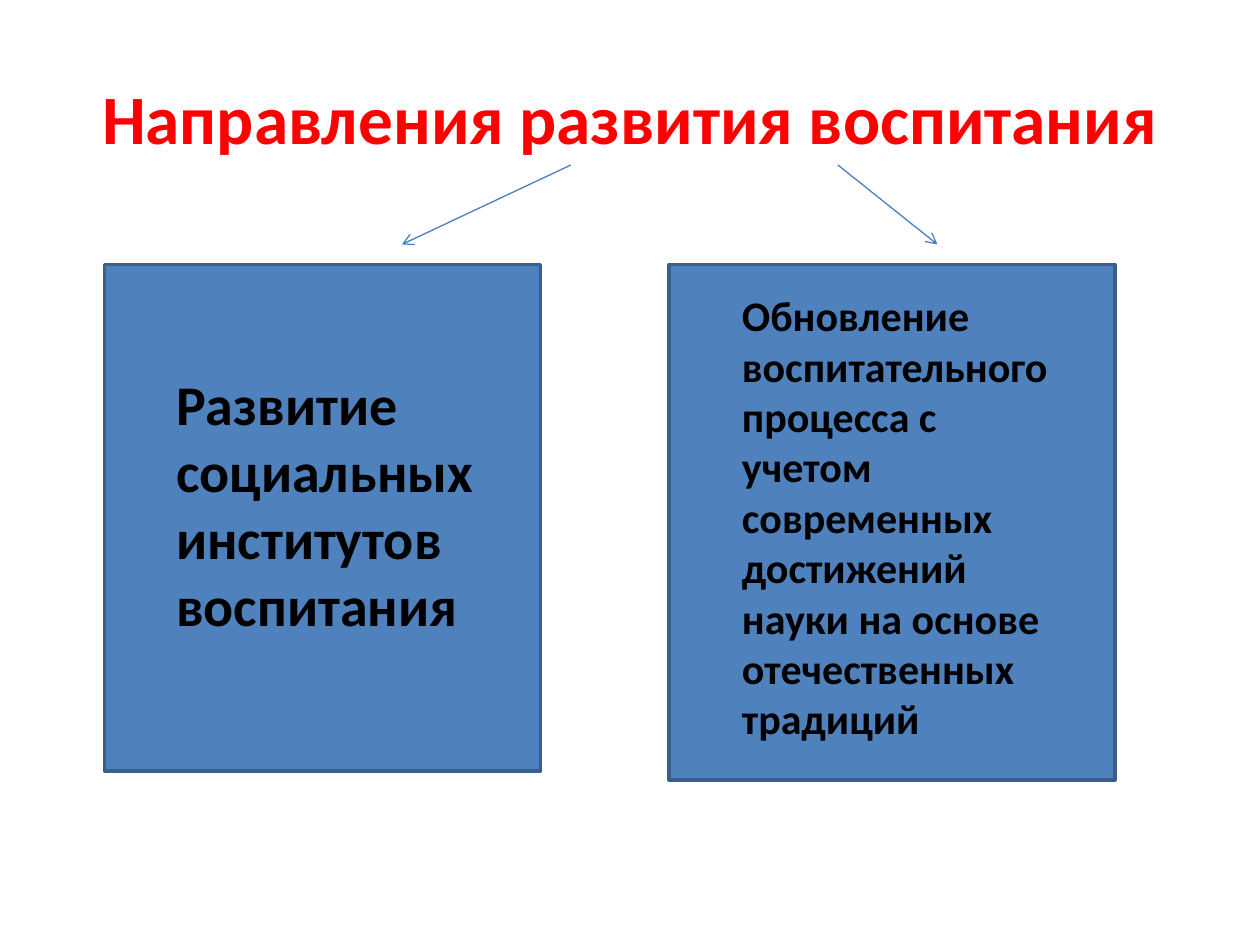
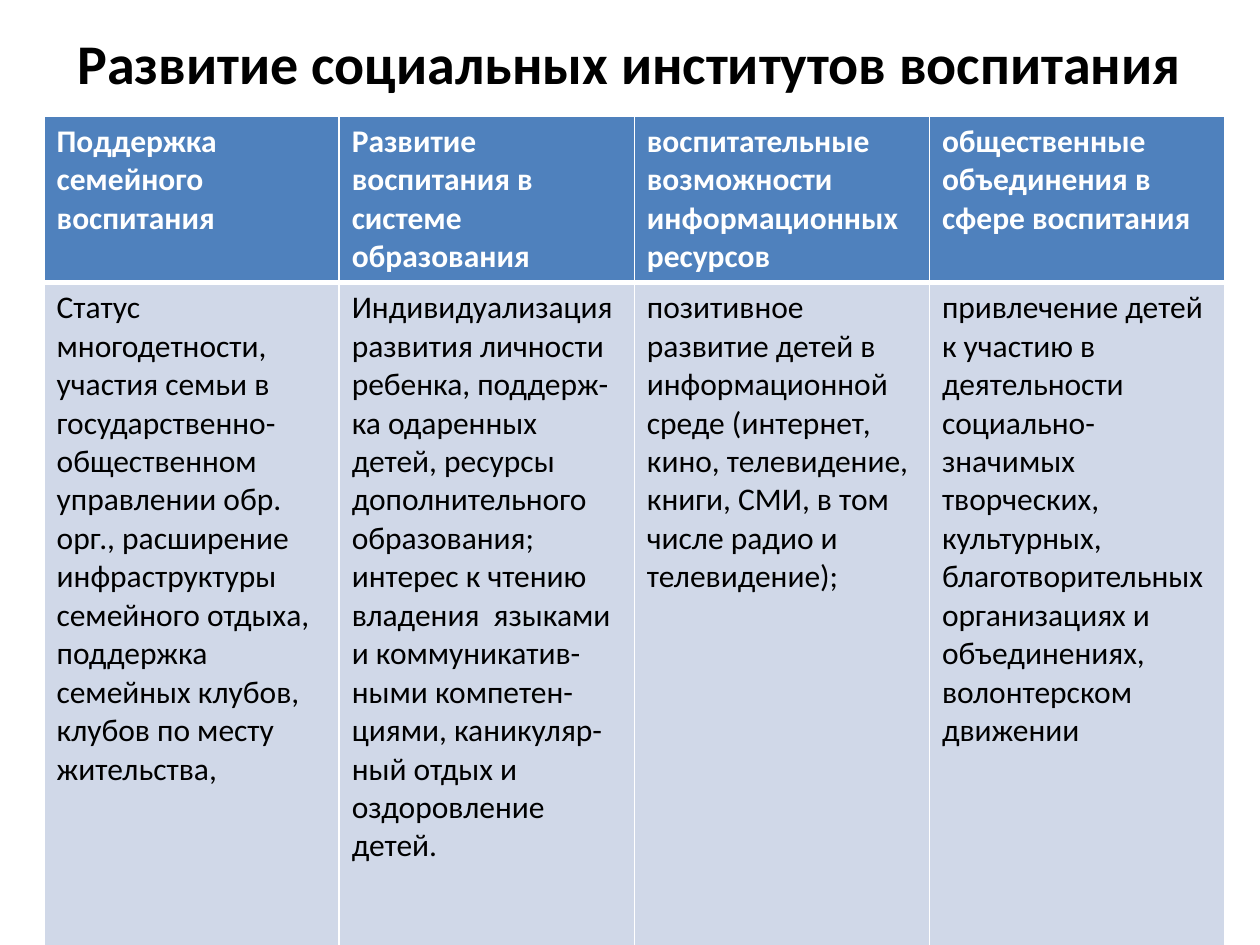
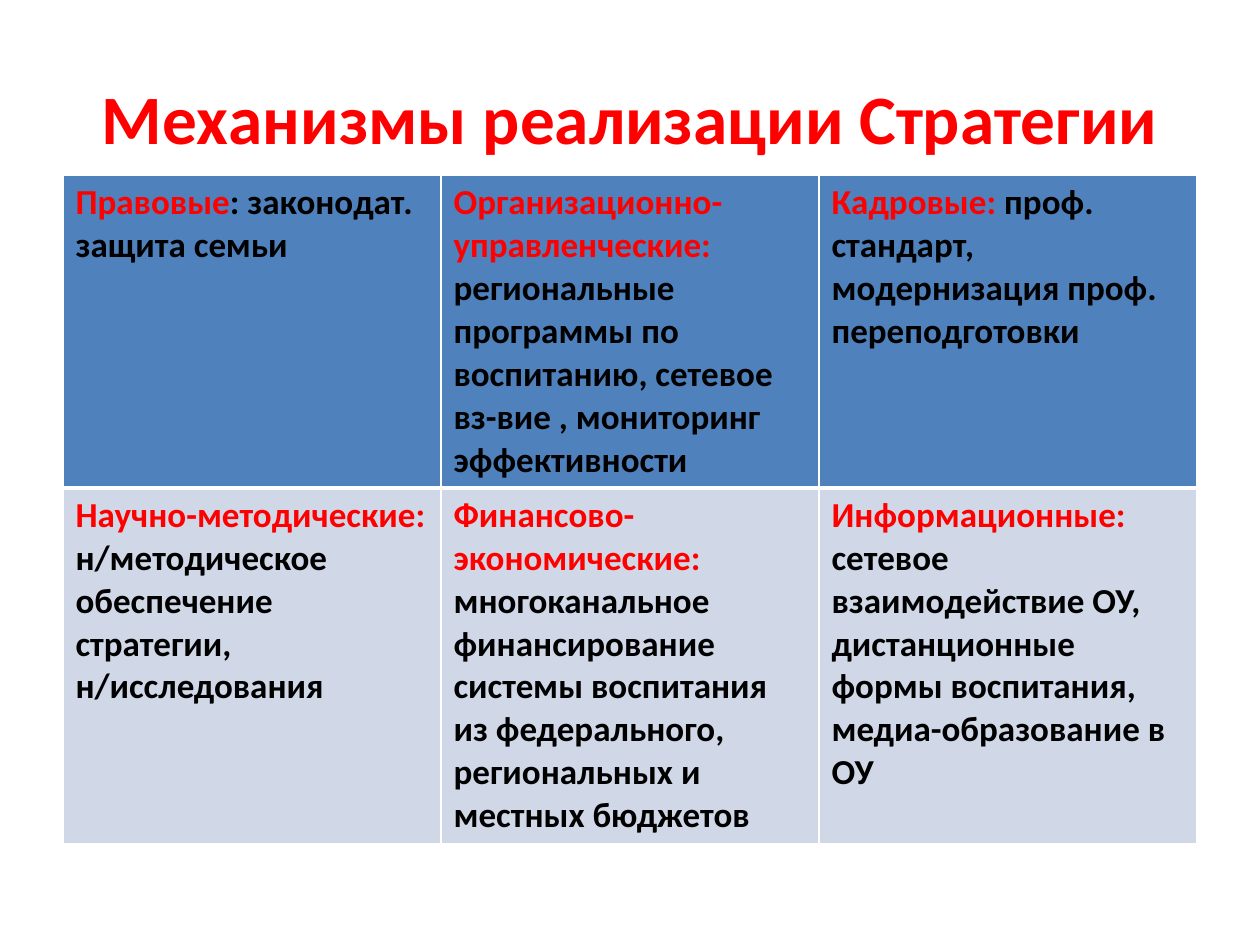
from dataclasses import dataclass
from typing import NamedTuple

from lxml import etree
from pptx import Presentation
from pptx import util as u
from pptx.dml.color import RGBColor
from pptx.enum import shapes, text
from pptx.oxml import ns


@dataclass(frozen=True)
class Theme:
    font: str = "Calibri"
    red: str = "FF0000"
    black: str = "000000"
    white: str = "FFFFFF"
    blue: str = "4F81BD"
    edge: str = "3A5F8C"
    arrow: str = "4B7EBC"
    pale: str = "D0D8E8"
    head: float = 39.6
    large: float = 32
    mid: float = 24
    note: float = 20
    small: float = 18
    thin: float = 1
    thick: float = 3


class Box(NamedTuple):
    col: float
    row: float
    wide: float
    high: float


class Style(NamedTuple):
    size: float
    ink: str
    bold: bool = True


class Run(NamedTuple):
    words: str
    ink: str | None = None


class Card(NamedTuple):
    frame: Box
    label: Box
    words: str
    size: float


class Arrow(NamedTuple):
    start: tuple[float, float]
    end: tuple[float, float]


class Band(NamedTuple):
    high: float
    fill: str
    style: Style
    cells: list


THEME = Theme()
WIDE, HIGH = u.Inches(10), u.Inches(7.5)
COLS, ROWS = 100, 75

TOP = Box(5, 3, 90, 12.5)
RED = Style(THEME.head, THEME.red)

CARDS = [
    Card(Box(8.3, 21, 34.6, 40.2), Box(13, 28.8, 26, 22.6),
         "Развитие социальных институтов воспитания", THEME.large),
    Card(Box(53.1, 21, 35.4, 40.9), Box(57.9, 22.5, 28.3, 37),
         "Обновление воспитательного процесса с учетом современных "
         "достижений науки на основе отечественных традиций", THEME.mid),
]
ARROWS = [
    Arrow((45.3, 13.1), (31.9, 19.4)),
    Arrow((66.5, 13.1), (74.4, 19.4)),
]

FIELDS = [
    Band(12.8, THEME.blue, Style(THEME.small, THEME.white), [
        ["Поддержка семейного воспитания"],
        ["Развитие воспитания в системе образования"],
        ["воспитательные возможности информационных ресурсов"],
        ["общественные объединения в сфере воспитания"],
    ]),
    Band(54.4, THEME.pale, Style(THEME.small, THEME.black, False), [
        ["Статус многодетности, участия семьи в государственно-общественном "
         "управлении обр. орг., расширение инфраструктуры семейного отдыха, "
         "поддержка семейных клубов, клубов по месту жительства,"],
        ["Индивидуализация развития личности ребенка, поддерж-ка одаренных "
         "детей, ресурсы дополнительного образования;",
         "интерес к чтению",
         "владения  языками и коммуникатив-ными компетен- циями, "
         "каникуляр-ный отдых и оздоровление детей."],
        ["позитивное развитие детей в информационной среде (интернет, кино, "
         "телевидение, книги, СМИ, в том числе радио и телевидение);"],
        ["привлечение детей к участию в деятельности социально-значимых "
         "творческих, культурных, благотворительных организациях и "
         "объединениях, волонтерском движении"],
    ]),
]


def pair(lead: str, rest: str) -> list:
    return [[Run(lead, THEME.red), Run(rest, THEME.black)]]


NOTE = Style(THEME.note, THEME.black)
MEANS = [
    Band(24.6, THEME.blue, NOTE, [
        pair("Правовые", ": законодат. защита семьи"),
        pair("Организационно-управленческие: ",
             "региональные программы по воспитанию, сетевое вз-вие , "
             "мониторинг эффективности"),
        pair("Кадровые: ",
             "проф. стандарт, модернизация проф. переподготовки"),
    ]),
    Band(28, THEME.pale, NOTE, [
        pair("Научно-методические: ",
             "н/методическое обеспечение стратегии, н/исследования"),
        pair("Финансово-экономические: ",
             "многоканальное финансирование системы воспитания из "
             "федерального, региональных и местных бюджетов"),
        pair("Информационные: ",
             "сетевое взаимодействие ОУ, дистанционные формы воспитания, "
             "медиа-образование в ОУ"),
    ]),
]


def across(cols: float) -> int:
    return round(WIDE * cols / COLS)


def down(rows: float) -> int:
    return round(HIGH * rows / ROWS)


def place(box: Box) -> tuple[int, int, int, int]:
    return across(box.col), down(box.row), across(box.wide), down(box.high)


def tint(code: str) -> RGBColor:
    return RGBColor.from_string(code)


def write(frame, lines: list, style: Style, align=text.PP_ALIGN.LEFT) -> None:
    for index, line in enumerate(lines):
        para = frame.add_paragraph() if index else frame.paragraphs[0]
        para.alignment = align
        font = para.font
        font.name, font.size, font.bold = THEME.font, u.Pt(style.size), style.bold
        font.color.rgb = tint(style.ink)
        for part in [Run(line)] if isinstance(line, str) else line:
            run = para.add_run()
            run.text = part.words
            if part.ink:
                run.font.color.rgb = tint(part.ink)


def start(deck, words: str, box: Box, style: Style):
    slide = deck.slides.add_slide(deck.slide_layouts[5])
    title = slide.shapes.title
    title.left, title.top, title.width, title.height = place(box)
    frame = title.text_frame
    frame.auto_size = text.MSO_AUTO_SIZE.NONE
    frame.vertical_anchor = text.MSO_ANCHOR.MIDDLE
    write(frame, [words], style, text.PP_ALIGN.CENTER)
    return slide


def panel(slide, card: Card) -> None:
    rect = slide.shapes.add_shape(shapes.MSO_SHAPE.RECTANGLE, *place(card.frame))
    rect.shadow.inherit = False
    rect.fill.solid()
    rect.fill.fore_color.rgb = tint(THEME.blue)
    rect.line.color.rgb = tint(THEME.edge)
    rect.line.width = u.Pt(2)


def label(slide, card: Card) -> None:
    frame = slide.shapes.add_textbox(*place(card.label)).text_frame
    frame.word_wrap = True
    frame.auto_size = text.MSO_AUTO_SIZE.SHAPE_TO_FIT_TEXT
    write(frame, [card.words], Style(card.size, THEME.black))


def point(slide, arrow: Arrow) -> None:
    (left, top), (right, base) = arrow.start, arrow.end
    link = slide.shapes.add_connector(
        shapes.MSO_CONNECTOR.STRAIGHT,
        across(left), down(top), across(right), down(base))
    link.line.color.rgb = tint(THEME.arrow)
    link.line.width = u.Pt(0.75)
    tail = etree.SubElement(link.line._get_or_add_ln(), ns.qn("a:tailEnd"))
    tail.set("type", "arrow")
    etree.SubElement(link._element.spPr, ns.qn("a:effectLst"))


def border(cell, first: bool) -> None:
    sides = {
        "lnL": THEME.thin,
        "lnR": THEME.thin,
        "lnT": THEME.thin if first else THEME.thick,
        "lnB": THEME.thick if first else THEME.thin,
    }
    props = cell._tc.get_or_add_tcPr()
    for index, (side, width) in enumerate(sides.items()):
        line = etree.Element(ns.qn(f"a:{side}"), w=str(u.Pt(width)))
        fill = etree.SubElement(line, ns.qn("a:solidFill"))
        etree.SubElement(fill, ns.qn("a:srgbClr"), val=THEME.white)
        props.insert(index, line)


def grid(slide, left: float, top: float, wide: float, bands: list[Band]) -> None:
    count = len(bands[0].cells)
    box = Box(left, top, wide, sum(band.high for band in bands))
    table = slide.shapes.add_table(len(bands), count, *place(box)).table
    table.horz_banding = False
    for col in table.columns:
        col.width = across(wide / count)
    for row, band in enumerate(bands):
        table.rows[row].height = down(band.high)
        for col, lines in enumerate(band.cells):
            cell = table.cell(row, col)
            cell.fill.solid()
            cell.fill.fore_color.rgb = tint(band.fill)
            border(cell, row == 0)
            write(cell.text_frame, lines, band.style)


def main() -> None:
    deck = Presentation()
    deck.slide_width, deck.slide_height = WIDE, HIGH

    slide = start(deck, "Направления развития воспитания", TOP, RED)
    for card in CARDS:
        panel(slide, card)
    for arrow in ARROWS:
        point(slide, arrow)
    for card in CARDS:
        label(slide, card)

    slide = start(deck, "Развитие социальных институтов воспитания",
                  Box(5, 0, 90, 9.9), Style(THEME.large, THEME.black))
    grid(slide, 3.5, 9.2, 93.7, FIELDS)

    slide = start(deck, "Механизмы реализации Стратегии", TOP, RED)
    grid(slide, 5, 13.9, 90, MEANS)

    deck.save("out.pptx")


if __name__ == "__main__":
    main()
